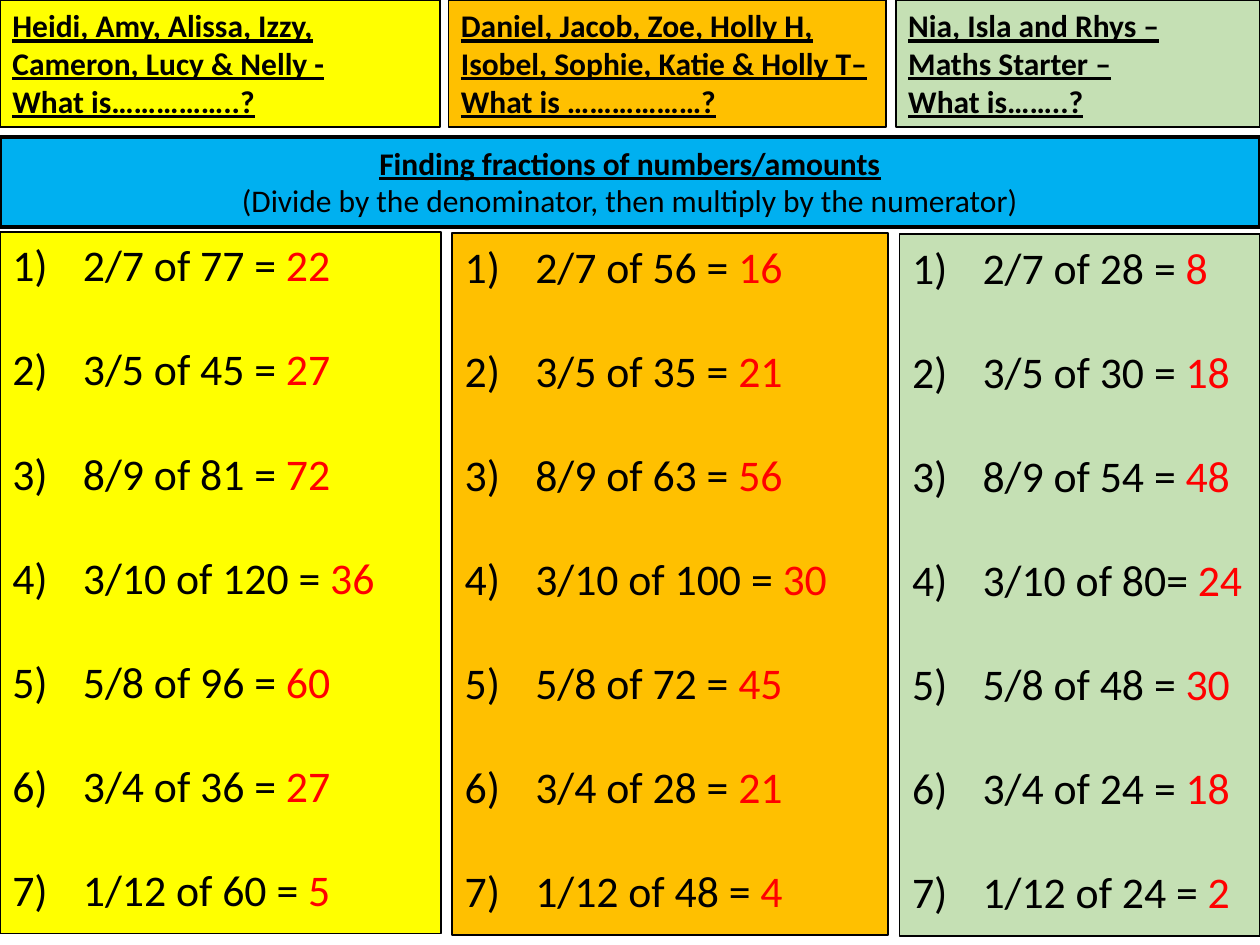
"""Build a maths starter slide on finding fractions of amounts."""
import pptx
import pptx.util
import pptx.dml.color
import pptx.enum.text
from lxml import etree

Inches, Pt = pptx.util.Inches, pptx.util.Pt
RGBColor = pptx.dml.color.RGBColor
Align = pptx.enum.text.PP_ALIGN

YELLOW = RGBColor(0xFF, 0xFF, 0x00)
AMBER = RGBColor(0xFF, 0xC0, 0x00)
GREEN = RGBColor(0xC5, 0xE0, 0xB4)
BLUE = RGBColor(0x00, 0xB0, 0xF0)
BLACK = RGBColor(0, 0, 0)
RED = RGBColor(0xFF, 0, 0)

GROUPS = [
    {
        "fill": YELLOW,
        "head": ["Heidi, Amy, Alissa, Izzy, Cameron, Lucy & Nelly -",
                 "What is……………..?"],
        "top": (0, 0, 3.49, 1.01),
        "body": (0, 1.84, 3.5, 5.57),
        "sums": [("2/7 of 77 = ", "22"), ("3/5 of 45 = ", "27"),
                 ("8/9 of 81 = ", "72"), ("3/10 of 120 = ", "36"),
                 ("5/8 of 96 = ", "60"), ("3/4 of 36 = ", "27"),
                 ("1/12 of 60 = ", "5")],
    },
    {
        "fill": AMBER,
        "head": ["Daniel, Jacob, Zoe, Holly H, Isobel, Sophie, Katie "
                 "& Holly T– What is ………………?"],
        "top": (3.56, 0, 3.47, 1.01),
        "body": (3.59, 1.85, 3.46, 5.57),
        "sums": [("2/7 of 56 = ", "16"), ("3/5 of 35 = ", "21"),
                 ("8/9 of 63 =", " 56"), ("3/10 of 100 = ", "30"),
                 ("5/8 of 72 = ", "45"), ("3/4 of 28 = ", "21"),
                 ("1/12 of 48 = ", "4")],
    },
    {
        "fill": GREEN,
        "head": ["Nia, Isla and Rhys – Maths Starter –", "What is……..?"],
        "top": (7.11, 0, 2.89, 1.01),
        "body": (7.14, 1.86, 2.86, 5.57),
        "sums": [("2/7 of 28 = ", "8"), ("3/5 of 30 = ", "18"),
                 ("8/9 of 54 = ", "48"), ("3/10 of 80= ", "24"),
                 ("5/8 of 48 =", " 30"), ("3/4 of 24 = ", "18"),
                 ("1/12 of 24 = ", "2")],
    },
]
TITLE = "Finding fractions of numbers/amounts"
HINT = "(Divide by the denominator, then multiply by the numerator)"
BANNER = (0, 1.09, 10, 0.71)


def add_box(slide, place, fill, width=1):
    box = slide.shapes.add_textbox(*map(Inches, place))
    box.fill.solid()
    box.fill.fore_color.rgb = fill
    box.line.color.rgb = BLACK
    box.line.width = Pt(width)
    box.text_frame.word_wrap = True
    box.text_frame.auto_size = pptx.enum.text.MSO_AUTO_SIZE.SHAPE_TO_FIT_TEXT
    return box.text_frame


def add_para(frame, first):
    return frame.paragraphs[0] if first else frame.add_paragraph()


def add_run(para, text, size=18, color=BLACK, strong=False):
    run = para.add_run()
    run.text = text
    font = run.font
    font.name, font.size = "Calibri", Pt(size)
    font.bold = font.underline = strong
    font.color.rgb = color


def number(para):
    props = para._p.get_or_add_pPr()
    props.set("marL", str(Inches(0.56)))
    props.set("indent", str(-Inches(0.56)))
    tag = etree.QName(para._p).namespace
    font = etree.SubElement(props, f"{{{tag}}}buFont")
    font.set("typeface", "+mj-lt")
    mark = etree.SubElement(props, f"{{{tag}}}buAutoNum")
    mark.set("type", "arabicParenR")


def add_group(slide, group):
    frame = add_box(slide, group["top"], group["fill"])
    for row, text in enumerate(group["head"]):
        add_run(add_para(frame, row == 0), text, strong=True)
    frame = add_box(slide, group["body"], group["fill"])
    for row, (task, answer) in enumerate(group["sums"]):
        para = add_para(frame, row == 0)
        if row:
            para.space_before = Pt(29.5)
        number(para)
        add_run(para, task, 25)
        add_run(para, answer, 25, RED)


def main():
    deck = pptx.Presentation()
    deck.slide_width, deck.slide_height = Inches(10), Inches(7.5)
    slide = deck.slides.add_slide(deck.slide_layouts[6])
    for group in GROUPS:
        add_group(slide, group)
    frame = add_box(slide, BANNER, BLUE, 2.25)
    for row, text in enumerate((TITLE, HINT)):
        para = add_para(frame, row == 0)
        para.alignment = Align.CENTER
        add_run(para, text, strong=row == 0)
    deck.save("out.pptx")


if __name__ == "__main__":
    main()
